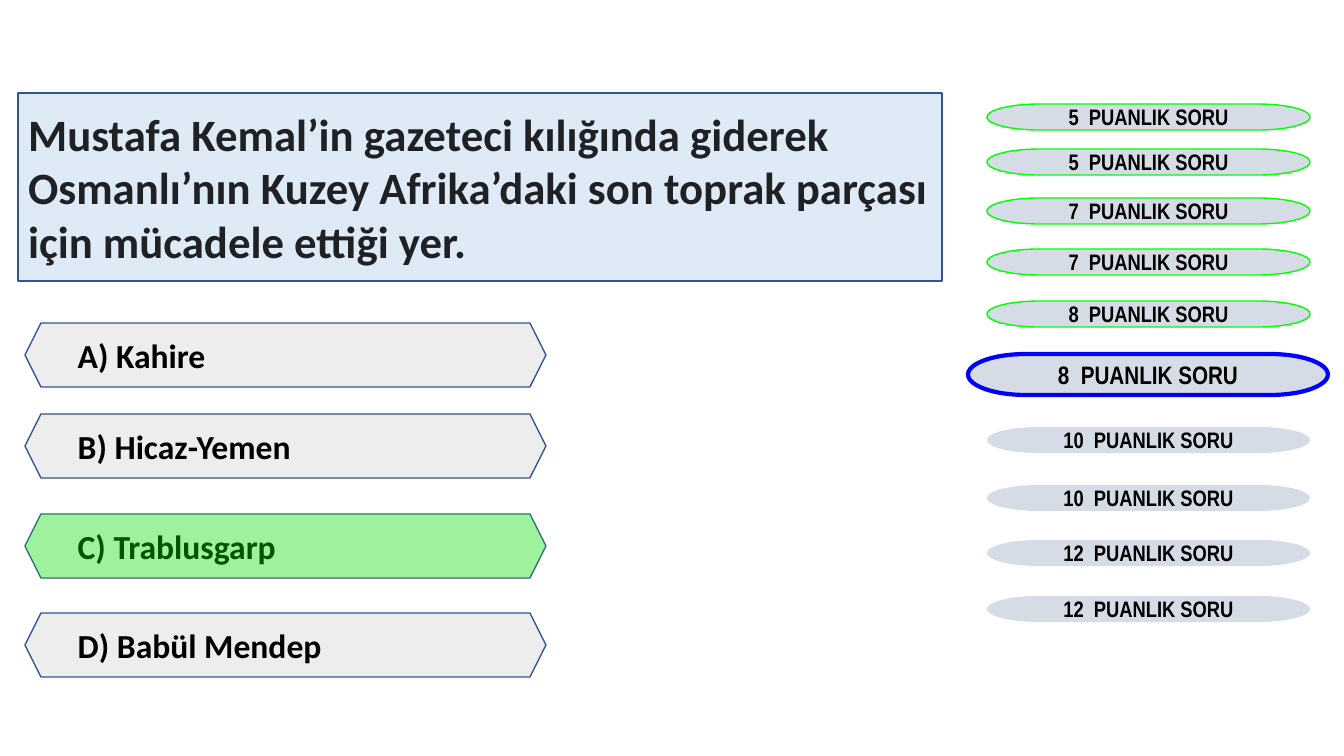
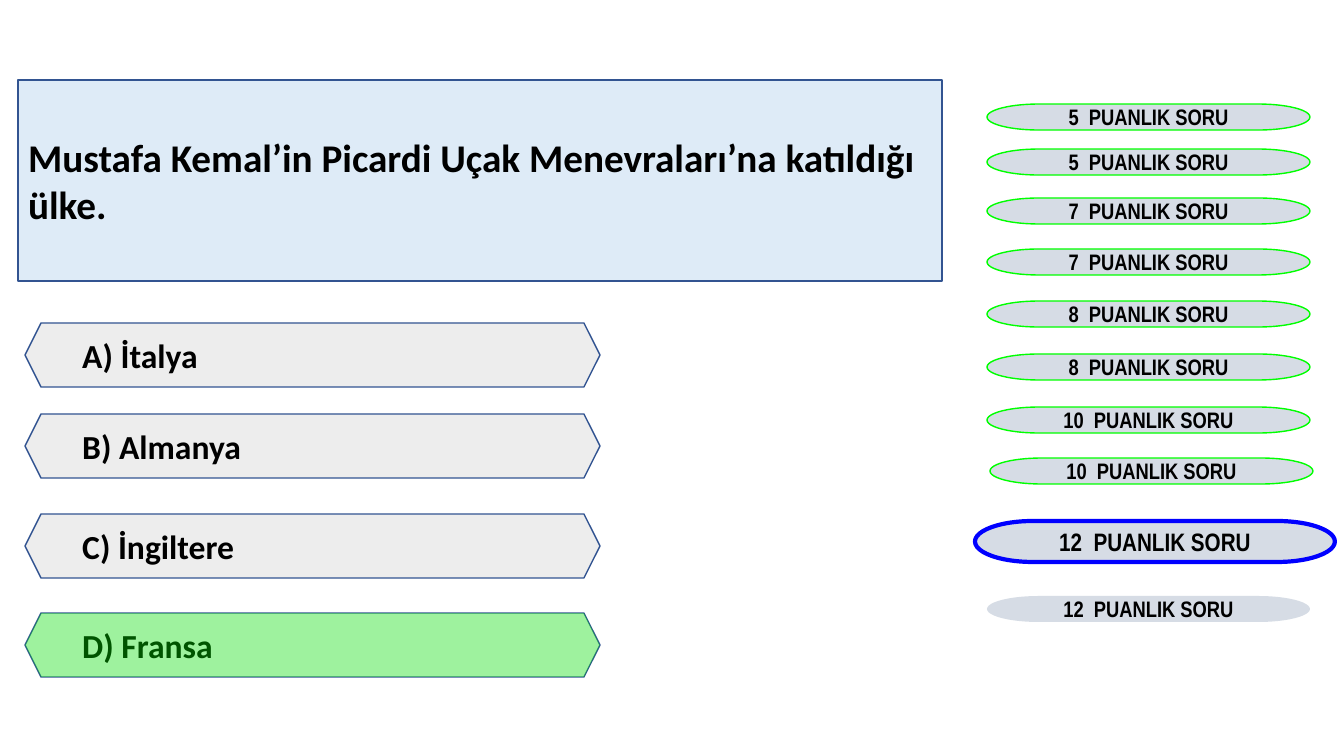
from dataclasses import dataclass
from typing import Optional

from lxml import etree
from pptx import Presentation
from pptx import util as u
from pptx.dml.color import RGBColor
from pptx.enum import shapes, text
from pptx.oxml import ns

PX = 914400 / 100.8
PAGE_WIDTH, PAGE_HEIGHT = 1344, 756
TITLE_ONLY = 5

BLACK = "000000"
INK = "202124"
OUTLINE = "325491"
QUESTION_FILL = "DEEBF7"
ANSWER_FILL = "EDEDED"
PILL_FILL = "D6DCE5"
GREEN = "00FF00"
BLUE = "0000FF"
CORRECT_ALPHA = 33

BODY_FONT = "Calibri"
PILL_FONT = "Arial Narrow"

QUESTION_LEFT, QUESTION_WIDTH, QUESTION_BOTTOM = 18, 924, 281
ANSWER_LEFT, ANSWER_HEIGHT = 25, 64
ANSWER_TOPS = (323, 414, 514, 613)
ANSWER_INSET = 4

POINTS = (5, 5, 7, 7, 8, 8, 10, 10, 12, 12)
DONE_TOPS = (104, 149, 198, 249, 301, 354, 407, 458)
WAITING_TOPS = {6: 427, 7: 485, 8: 540, 9: 596}
PILL_LEFT, PILL_WIDTH, PILL_HEIGHT = 987, 323, 26
ACTIVE_WIDTH, ACTIVE_HEIGHT = 360, 41


@dataclass(frozen=True)
class Box:
    left: int
    top: int
    width: int
    height: int

    def emu(self) -> tuple:
        return tuple(px(n) for n in (self.left, self.top, self.width, self.height))


@dataclass(frozen=True)
class Style:
    fill: str
    line: Optional[str] = None
    line_width: int = 1


@dataclass(frozen=True)
class Type:
    size: int
    font: str = BODY_FONT
    color: str = BLACK
    align: text.PP_ALIGN = text.PP_ALIGN.LEFT


@dataclass(frozen=True)
class Quiz:
    question: str
    question_top: int
    question_type: Type
    answers: tuple
    answer_width: int
    correct: int
    active: int
    active_left: int
    active_top: int
    last_done_shift: int = 0


ANSWER_STYLE = Style(ANSWER_FILL, OUTLINE)
ANSWER_TYPE = Type(24)
PILL_TYPE = Type(16, PILL_FONT, align=text.PP_ALIGN.CENTER)
ACTIVE_TYPE = Type(18, PILL_FONT, align=text.PP_ALIGN.CENTER)

QUIZZES = (
    Quiz(
        "Mustafa Kemal’in gazeteci kılığında giderek Osmanlı’nın Kuzey "
        "Afrika’daki son toprak parçası için mücadele ettiği yer.",
        93, Type(32, color=INK),
        ("A) Kahire", "B) Hicaz-Yemen", "C) Trablusgarp", "D) Babül Mendep"),
        521, correct=2, active=5, active_left=968, active_top=354,
    ),
    Quiz(
        "Mustafa Kemal’in Picardi Uçak Menevraları’na katıldığı ülke.",
        80, Type(28),
        ("A) İtalya", "B) Almanya", "C) İngiltere", "D) Fransa"),
        575, correct=3, active=8, active_left=975, active_top=521,
        last_done_shift=3,
    ),
)


def px(length: int) -> u.Emu:
    return u.Emu(round(length * PX))


def rgb(value: str) -> RGBColor:
    return RGBColor.from_string(value)


def paint(shape, style: Style) -> None:
    shape.fill.solid()
    shape.fill.fore_color.rgb = rgb(style.fill)
    if style.line is None:
        shape.line.fill.background()
    else:
        shape.line.color.rgb = rgb(style.line)
        shape.line.width = u.Pt(style.line_width)


def write(shape, words: str, kind: Type) -> None:
    frame = shape.text_frame
    frame.text = words
    frame.word_wrap = True
    frame.auto_size = text.MSO_AUTO_SIZE.NONE
    frame.vertical_anchor = text.MSO_ANCHOR.MIDDLE
    para = frame.paragraphs[0]
    para.alignment = kind.align
    para.font.name = kind.font
    para.font.size = u.Pt(kind.size)
    para.font.bold = True
    para.font.color.rgb = rgb(kind.color)


def add_box(page, preset, box: Box, style: Style):
    shape = page.shapes.add_shape(preset, *box.emu())
    shape.shadow.inherit = False
    paint(shape, style)
    return shape


def set_alpha(shape, percent: int) -> None:
    color = shape.fill._xPr.find(".//" + ns.qn("a:srgbClr"))
    etree.SubElement(color, ns.qn("a:alpha"), val=str(percent * 1000))


def draw_question(page, quiz: Quiz) -> None:
    """Turn the title placeholder into the rounded question panel."""
    title = page.shapes.title
    box = Box(QUESTION_LEFT, quiz.question_top, QUESTION_WIDTH,
              QUESTION_BOTTOM - quiz.question_top)
    title.left, title.top, title.width, title.height = box.emu()
    outline = etree.SubElement(title.element.spPr, ns.qn("a:prstGeom"), prst="roundRect")
    etree.SubElement(outline, ns.qn("a:avLst"))
    paint(title, Style(QUESTION_FILL, OUTLINE))
    write(title, quiz.question, quiz.question_type)


def draw_answers(page, quiz: Quiz) -> None:
    hexagon = shapes.MSO_SHAPE.HEXAGON
    boxes = [Box(ANSWER_LEFT, top, quiz.answer_width, ANSWER_HEIGHT) for top in ANSWER_TOPS]
    for box, words in zip(boxes, quiz.answers):
        answer = add_box(page, hexagon, box, ANSWER_STYLE)
        write(answer, words, ANSWER_TYPE)
        frame = answer.text_frame
        frame.margin_left = frame.margin_right = px(ANSWER_INSET)
        frame.margin_top = frame.margin_bottom = px(ANSWER_INSET)
    highlight = add_box(page, hexagon, boxes[quiz.correct], Style(GREEN))
    set_alpha(highlight, CORRECT_ALPHA)


def draw_score_ladder(page, quiz: Quiz) -> None:
    """Draw done steps in green, the active one in blue, the rest unlined."""
    for step, points in enumerate(POINTS):
        kind = PILL_TYPE
        if step == quiz.active:
            box = Box(quiz.active_left, quiz.active_top, ACTIVE_WIDTH, ACTIVE_HEIGHT)
            style, kind = Style(PILL_FILL, BLUE, 3), ACTIVE_TYPE
        elif step < quiz.active:
            shift = quiz.last_done_shift if step == quiz.active - 1 else 0
            box = Box(PILL_LEFT + shift, DONE_TOPS[step], PILL_WIDTH, PILL_HEIGHT)
            style = Style(PILL_FILL, GREEN)
        else:
            box = Box(PILL_LEFT, WAITING_TOPS[step], PILL_WIDTH, PILL_HEIGHT)
            style = Style(PILL_FILL)
        pill = add_box(page, shapes.MSO_SHAPE.FLOWCHART_TERMINATOR, box, style)
        write(pill, f"{points}  PUANLIK SORU", kind)


def main() -> None:
    deck = Presentation()
    deck.slide_width, deck.slide_height = px(PAGE_WIDTH), px(PAGE_HEIGHT)
    for quiz in QUIZZES:
        page = deck.slides.add_slide(deck.slide_layouts[TITLE_ONLY])
        draw_question(page, quiz)
        draw_answers(page, quiz)
        draw_score_ladder(page, quiz)
    deck.save("out.pptx")


if __name__ == "__main__":
    main()
